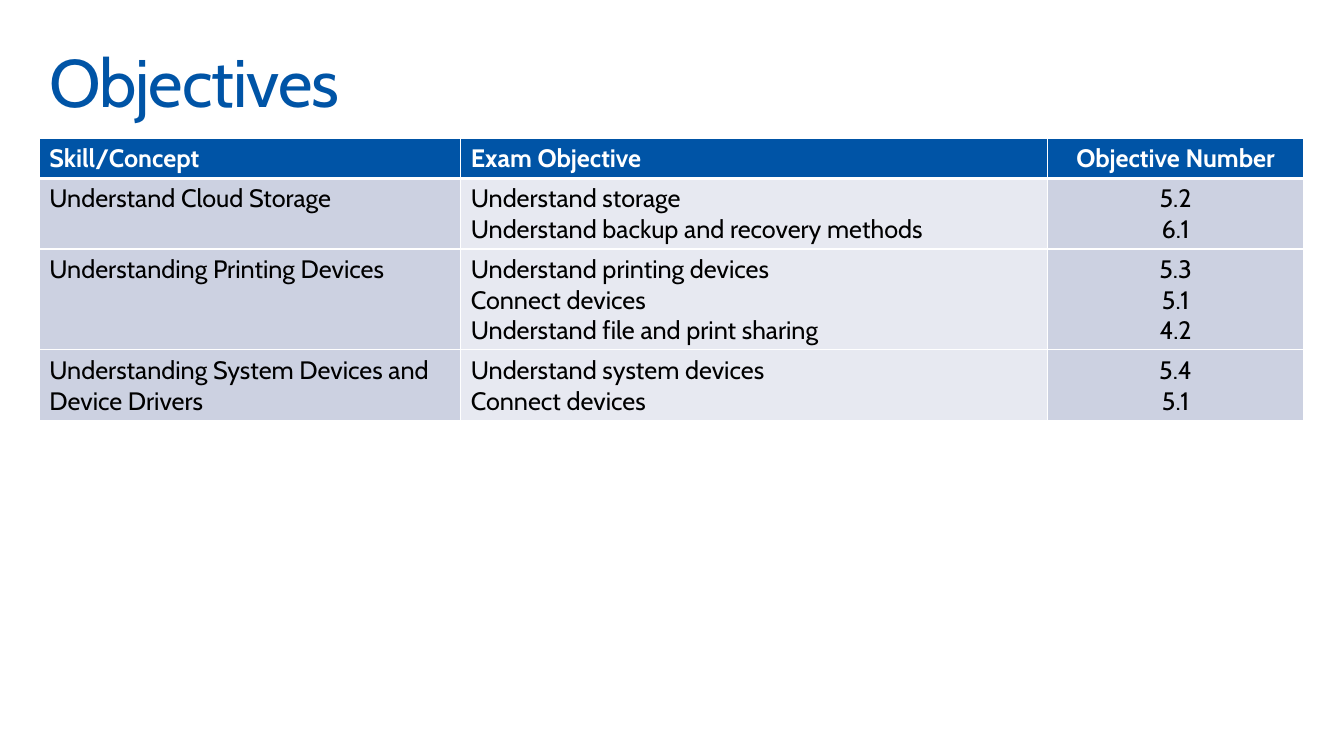
from dataclasses import dataclass

from lxml import etree
from pptx import Presentation, util as u
from pptx.dml.color import RGBColor
from pptx.enum import text
from pptx.oxml.ns import qn

PX = 9144  # EMU per px, 100 px to the inch


@dataclass(frozen=True)
class Theme:
    font: str = "Cabin"
    blue: str = "0054A6"
    dark: str = "CCD1E1"
    pale: str = "E7E9F1"
    white: str = "FFFFFF"
    black: str = "000000"
    title: int = 48
    body: int = 18


class Deck:
    def __init__(self, theme):
        self.theme = theme
        self.prs = Presentation()
        self.prs.slide_width, self.prs.slide_height = 1333 * PX, 750 * PX
        self.slide = self.prs.slides.add_slide(self.prs.slide_layouts[6])

    def run(self, para, words, size, color, bold=False):
        run = para.add_run()
        run.text = words
        font = run.font
        font.name, font.size, font.bold = self.theme.font, u.Pt(size), bold
        font.color.rgb = RGBColor.from_string(color)
        return run

    def title(self, words, x, y, w, h):
        frame = self.slide.shapes.add_textbox(x * PX, y * PX, w * PX, h * PX).text_frame
        frame.word_wrap = True
        frame.vertical_anchor = text.MSO_ANCHOR.TOP
        frame.margin_left = frame.margin_right = 10 * PX
        frame.margin_top = frame.margin_bottom = 10 * PX
        para = frame.paragraphs[0]
        para.line_spacing = 0.9
        run = self.run(para, words, self.theme.title, self.theme.blue)
        run.font._element.set("spc", "-70")

    def border(self, cell, base):
        props = cell._tc.get_or_add_tcPr()
        for i, (side, width) in enumerate([("L", 1), ("R", 1), ("T", 1), ("B", base)]):
            line = etree.Element(qn(f"a:ln{side}"), w=str(u.Pt(width)))
            fill = etree.SubElement(line, qn("a:solidFill"))
            etree.SubElement(fill, qn("a:srgbClr"), val=self.theme.white)
            props.insert(i, line)

    def cell(self, cell, lines, fill, color, head, center):
        cell.fill.solid()
        cell.fill.fore_color.rgb = RGBColor.from_string(fill)
        self.border(cell, 3 if head else 1)
        frame = cell.text_frame
        for i, line in enumerate(lines):
            para = frame.add_paragraph() if i else frame.paragraphs[0]
            para.alignment = text.PP_ALIGN.CENTER if center else text.PP_ALIGN.LEFT
            self.run(para, line, self.theme.body, color, head)

    def table(self, rows, x, y, widths):
        theme = self.theme
        # Row height follows the longest list of lines in the row
        highs = [10 + 30 * max(map(len, row)) for row in rows]
        grid = self.slide.shapes.add_table(
            len(rows), len(widths), x * PX, y * PX, sum(widths) * PX, sum(highs) * PX
        ).table
        for col, wide in zip(grid.columns, widths):
            col.width = wide * PX
        for r, (row, high) in enumerate(zip(rows, highs)):
            grid.rows[r].height = high * PX
            head = r == 0
            for c, lines in enumerate(row):
                fill = theme.blue if head else theme.pale if c == 1 else theme.dark
                color = theme.white if head else theme.black
                self.cell(grid.cell(r, c), lines, fill, color, head, c == 2)


ROWS = [
    (["Skill/Concept"], ["Exam Objective"], ["Objective Number"]),
    (["Understand Cloud Storage"],
     ["Understand storage", "Understand backup and recovery methods"],
     ["5.2", "6.1"]),
    (["Understanding Printing Devices"],
     ["Understand printing devices", "Connect devices", "Understand file and print sharing"],
     ["5.3", "5.1", "4.2"]),
    (["Understanding System Devices and Device Drivers"],
     ["Understand system devices", "Connect devices"],
     ["5.4", "5.1"]),
]


def main():
    deck = Deck(Theme())
    # Heading
    deck.title("Objectives", 39, 39, 1255, 98)
    # Objectives by skill
    deck.table(ROWS, 39, 137, [418, 582, 254])
    deck.prs.save("out.pptx")


if __name__ == "__main__":
    main()
